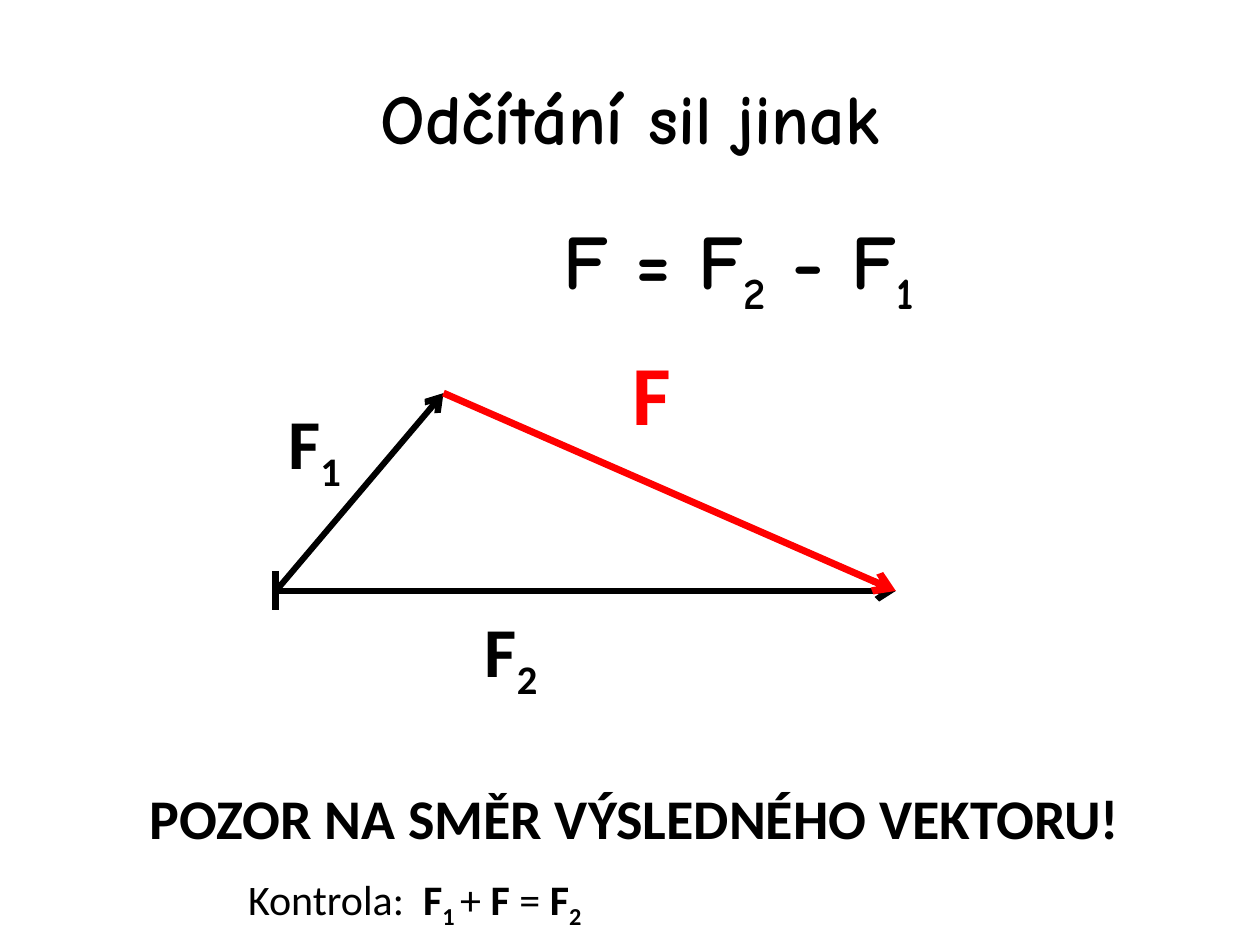
from lxml.etree import SubElement
from pptx import Presentation
from pptx.dml.color import RGBColor
from pptx.enum.shapes import MSO_CONNECTOR
from pptx.enum.text import MSO_ANCHOR, PP_ALIGN
from pptx.oxml.ns import qn
from pptx.util import Inches, Pt

COLORS = {"ink": "000000", "result": "FF0000"}
HAND, SANS = "Comic Neue", "Calibri"

# Run styles: b = bold, s = bold subscript, n = normal
TITLE = ((0.5, 0.3, 9, 1.25), HAND, 40, "ink", [("Odčítání sil jinak", "b")])
TEXTS = [
    ((2.19, 3.12, 0.7, 0.77), SANS, 40, "ink", [("F", "b"), ("1", "s")]),
    ((3.75, 4.77, 0.78, 0.77), SANS, 40, "ink", [("F", "b"), ("2", "s")]),
    ((4.92, 2.66, 0.63, 0.91), SANS, 48, "result", [("F", "b")]),
    ((4.37, 1.64, 4.38, 0.84), HAND, 44, "ink",
     [("F = F", "b"), ("2", "s"), (" - F", "b"), ("1", "s")]),
    ((1.09, 6.17, 8.36, 0.64), SANS, 32, "ink",
     [("POZOR NA SMĚR VÝSLEDNÉHO VEKTORU!", "b")]),
    ((1.87, 6.88, 4.61, 0.5), SANS, 24, "ink",
     [("Kontrola: ", "n"), (" F", "b"), ("1 ", "s"), ("+", "n"),
      (" F ", "b"), ("=", "n"), (" F", "b"), ("2", "s")]),
]

ORIGIN, F1_TIP, F2_TIP = (2.19, 4.69), (3.52, 3.12), (7.11, 4.69)
# start, end, colour, width, arrowhead
LINES = [
    (ORIGIN, F1_TIP, "ink", 3.5, True),
    (ORIGIN, F2_TIP, "ink", 3.5, True),
    ((2.19, 4.53), (2.19, 4.84), "ink", 4, False),
    (F1_TIP, F2_TIP, "result", 4, True),
]


def add_text(s, box, font, size, color, runs):
    tf = s.shapes.add_textbox(*map(Inches, box)).text_frame
    tf.word_wrap = True
    p = tf.paragraphs[0]
    for text, style in runs:
        r = p.add_run()
        r.text = text
        r.font.name = font
        r.font.size = Pt(size)
        r.font.bold = style != "n"
        r.font.color.rgb = RGBColor.from_string(COLORS[color])
        if style == "s":
            r._r.get_or_add_rPr().set("baseline", "-25000")
    return tf


def add_line(s, start, end, color, width, arrow):
    line = s.shapes.add_connector(MSO_CONNECTOR.STRAIGHT, *map(Inches, start + end))
    line.line.color.rgb = RGBColor.from_string(COLORS[color])
    line.line.width = Pt(width)
    if arrow:
        SubElement(line.line._get_or_add_ln(), qn("a:tailEnd"), type="arrow")
    SubElement(line._element.spPr, qn("a:effectLst"))


def main():
    prs = Presentation()
    prs.slide_width, prs.slide_height = Inches(10), Inches(7.5)
    s = prs.slides.add_slide(prs.slide_layouts[6])

    title = add_text(s, *TITLE)
    title.vertical_anchor = MSO_ANCHOR.MIDDLE
    title.paragraphs[0].alignment = PP_ALIGN.CENTER
    for line in LINES:
        add_line(s, *line)
    for text in TEXTS:
        add_text(s, *text)
    prs.save("out.pptx")


if __name__ == "__main__":
    main()
